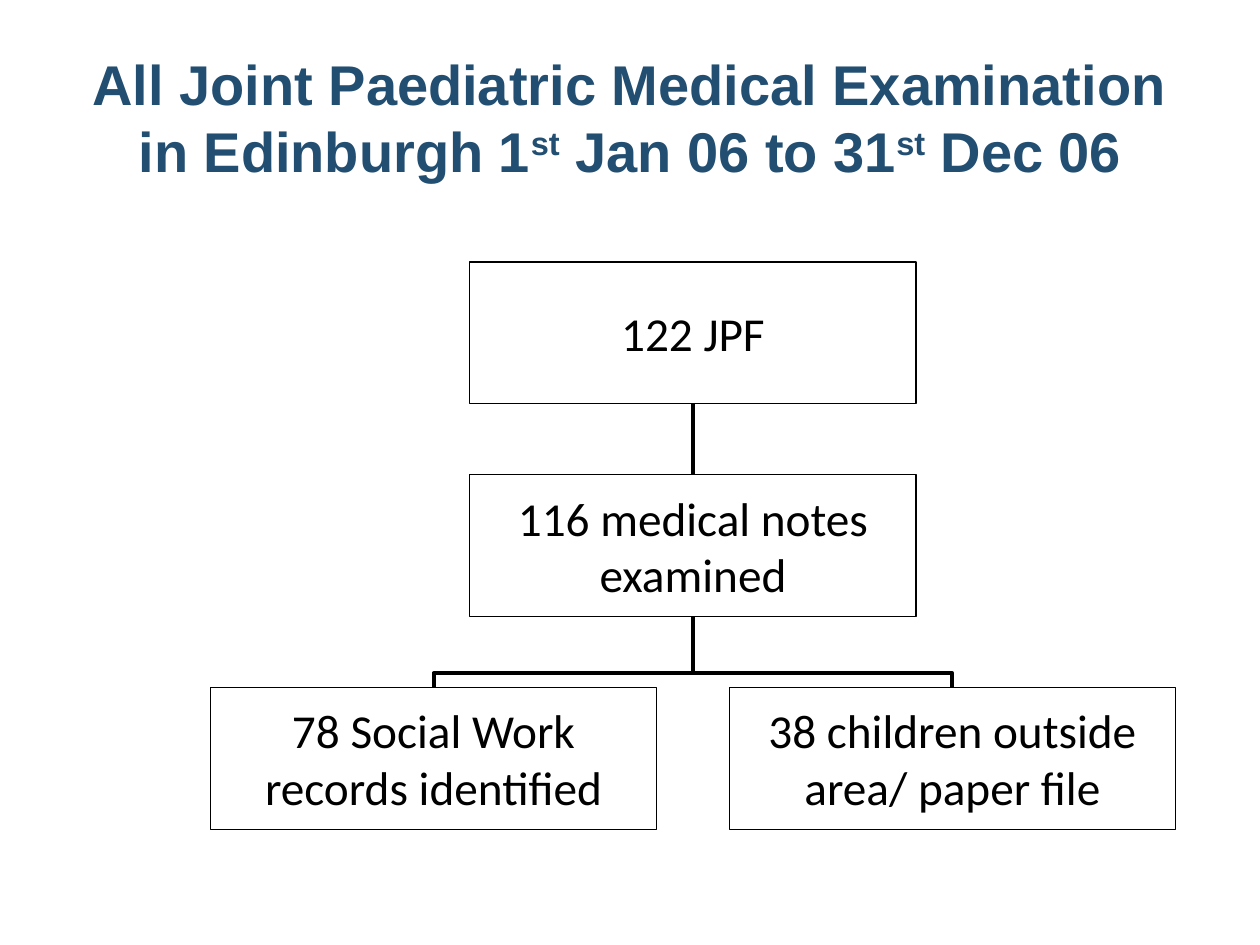
from lxml import etree
from pptx import Presentation
from pptx.dml.color import RGBColor
from pptx.enum.shapes import MSO_CONNECTOR, MSO_SHAPE
from pptx.enum.text import MSO_ANCHOR, PP_ALIGN
from pptx.oxml.ns import qn
from pptx.util import Cm, Pt

BLACK = RGBColor(0x00, 0x00, 0x00)
NAVY = RGBColor(0x22, 0x4E, 0x71)
STRAIGHT, ELBOW = MSO_CONNECTOR.STRAIGHT, MSO_CONNECTOR.ELBOW
RECTANGLE = MSO_SHAPE.RECTANGLE
MIDDLE, CENTER = MSO_ANCHOR.MIDDLE, PP_ALIGN.CENTER

TITLE = [
    ("All Joint Paediatric Medical Examination in Edinburgh 1", False),
    ("st", True),
    (" Jan 06 to 31", False),
    ("st", True),
    (" Dec 06", False),
]
STAGES = {
    "referrals": ("122 JPF", 0, 0),
    "notes": ("116 medical notes examined", 0, 1),
    "social_work": ("78 Social Work records identified", -1, 2),
    "outside": ("38 children outside area/ paper file", 1, 2),
}
BRANCHES = ["social_work", "outside"]

BOX_WIDTH, BOX_HEIGHT = Cm(9), Cm(2.86)
AXIS, FIRST_TOP = Cm(13.97), Cm(5.28)
SIDE_STEP, ROW_STEP = Cm(5.23), Cm(4.29)
ELBOW_SHARE = 0.8

TITLE_FONT = {"name": "Arial", "size": Pt(32), "bold": True}
STAGE_FONT = {"name": "Calibri", "size": Pt(27)}
TITLE_PLACE = {"left": Cm(1.27), "top": Cm(0.76), "width": Cm(22.86), "height": Cm(3.18)}
STAGE_FRAME = {
    "word_wrap": True, "vertical_anchor": MIDDLE,
    "margin_left": Cm(0.38), "margin_right": Cm(0.38),
    "margin_top": Cm(0.13), "margin_bottom": Cm(0.13),
}


def apply(target, values):
    for key, value in values.items():
        setattr(target, key, value)


def add_stage(slide, label, side, row):
    left = AXIS + side * SIDE_STEP - BOX_WIDTH // 2
    stage = slide.shapes.add_shape(
        RECTANGLE, left, FIRST_TOP + row * ROW_STEP, BOX_WIDTH, BOX_HEIGHT)
    stage.shadow.inherit = False
    stage.fill.background()
    stage.line.color.rgb = BLACK
    stage.line.width = Pt(0.75)
    apply(stage.text_frame, STAGE_FRAME)
    paragraph = stage.text_frame.paragraphs[0]
    paragraph.text = label
    paragraph.alignment = CENTER
    apply(paragraph.font, STAGE_FONT)
    paragraph.font.color.rgb = BLACK
    return stage


def add_link(slide, kind, *ends):
    link = slide.shapes.add_connector(kind, *ends)
    link.line.color.rgb = BLACK
    link.line.width = Pt(2.25)
    etree.SubElement(link._element.spPr, qn("a:effectLst"))
    return link


def add_branch(slide, parent, child):
    start_x, start_y = parent.left + parent.width // 2, parent.top + parent.height
    end_x, end_y = child.left + child.width // 2, child.top
    drop, reach = end_y - start_y, abs(end_x - start_x)
    left = (start_x + end_x - drop) // 2
    top = (start_y + end_y - reach) // 2
    to_right = end_x > start_x
    xs = (left + drop, left) if to_right else (left, left + drop)
    branch = add_link(slide, ELBOW, xs[0], top, xs[1], top + reach)
    properties = branch._element.spPr
    properties.find(qn("a:xfrm")).set("rot", str((270 if to_right else 90) * 60000))
    guides = properties.find(qn("a:prstGeom")).find(qn("a:avLst"))
    etree.SubElement(guides, qn("a:gd"), name="adj1",
                     fmla=f"val {round(ELBOW_SHARE * 100000)}")


def add_title(slide):
    title = slide.shapes.title
    apply(title, TITLE_PLACE)
    apply(title.text_frame, {"word_wrap": True, "vertical_anchor": MIDDLE})
    paragraph = title.text_frame.paragraphs[0]
    paragraph.alignment = CENTER
    for words, raised in TITLE:
        run = paragraph.add_run()
        run.text = words
        apply(run.font, TITLE_FONT)
        run.font.color.rgb = NAVY
        if raised:
            run._r.get_or_add_rPr().set("baseline", "30000")


def main():
    deck = Presentation()
    deck.slide_width, deck.slide_height = Cm(25.4), Cm(19.05)
    slide = deck.slides.add_slide(deck.slide_layouts[5])
    add_title(slide)
    stages = {key: add_stage(slide, *stage) for key, stage in STAGES.items()}
    trunk = add_link(slide, STRAIGHT, 0, 0, 0, 0)
    trunk.begin_connect(stages["referrals"], 2)
    trunk.end_connect(stages["notes"], 0)
    for key in BRANCHES:
        add_branch(slide, stages["notes"], stages[key])
    deck.save("out.pptx")


if __name__ == "__main__":
    main()
